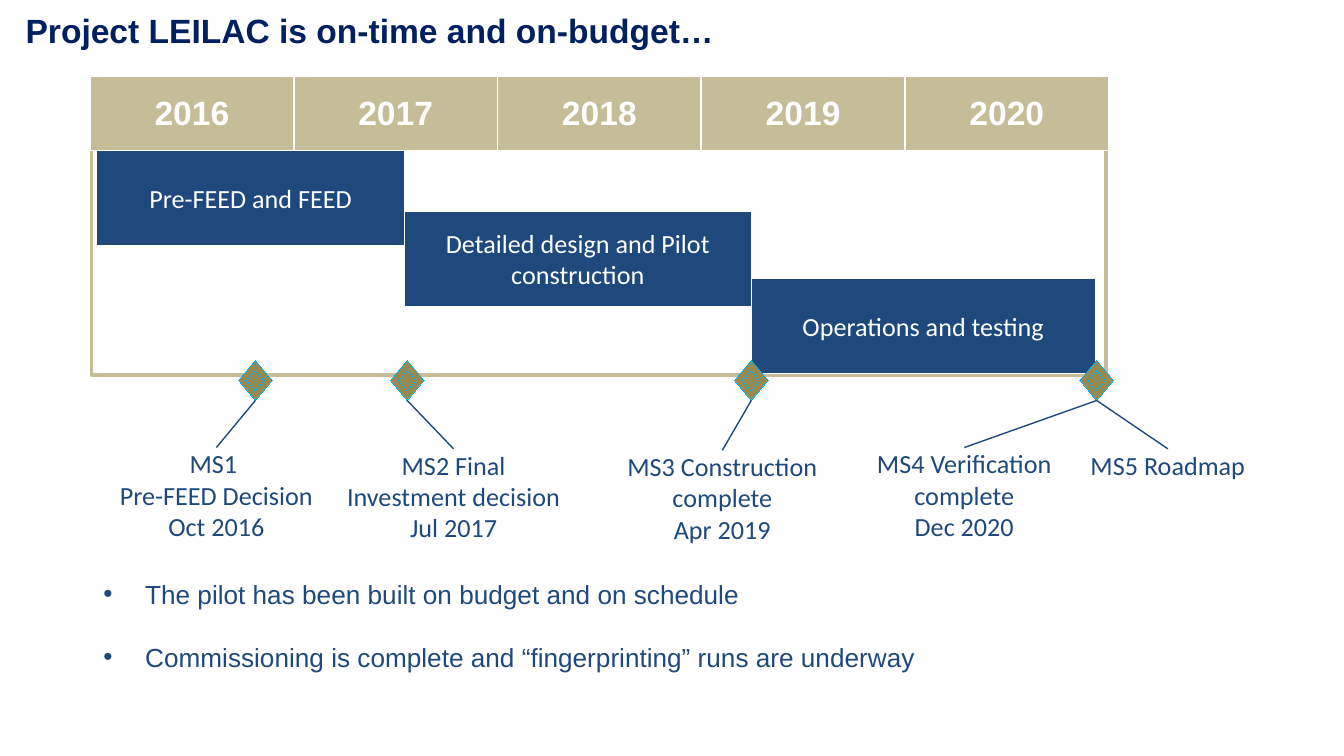
from lxml.etree import SubElement
from pptx import Presentation
from pptx.dml.color import RGBColor
from pptx.enum.shapes import MSO_CONNECTOR, MSO_SHAPE
from pptx.enum.text import MSO_ANCHOR as Anchor, MSO_AUTO_SIZE as AutoSize, PP_ALIGN as Align
from pptx.oxml.ns import qn
from pptx.util import Inches, Pt

NAVY, BLUE, WHITE = "002060", "1F497D", "FFFFFF"
SAND, OLIVE, CYAN = "C4BD97", "948A54", "00B0F0"
HAIRLINE = 0.01

YEARS = ["2016", "2017", "2018", "2019", "2020"]
PHASES = [  # left, top, width, name
    (0.72, 1.12, 2.29, "Pre-FEED and FEED"),
    (3.01, 1.57, 2.58, "Detailed design and Pilot construction"),
    (5.59, 2.07, 2.56, "Operations and testing"),
]
MARKER_CENTERS = [1.9, 3.03, 5.59, 8.16]
MILESTONES = [  # marker index, left, top, width, paragraphs of lines
    (0, 0.67, 3.33, 1.88, [["MS1 "], ["Pre-FEED Decision", "Oct 2016"]]),
    (1, 2.58, 3.34, 1.59, [["MS2 Final Investment decision", "Jul 2017"]]),
    (2, 4.55, 3.35, 1.65, [["MS3 Construction complete", "Apr 2019"]]),
    (3, 6.39, 3.33, 1.57, [["MS4 Verification complete", "Dec 2020"]]),
    (3, 8.06, 3.34, 1.26, [["MS5 Roadmap"]]),
]
BULLETS = [
    "The pilot has been built on budget and on schedule",
    "Commissioning is complete and “fingerprinting” runs are underway",
]


def color(hex_value):
    return RGBColor.from_string(hex_value)


def inches(*values):
    return [Inches(value) for value in values]


def place(shape, left, top, width, height):
    shape.left, shape.top, shape.width, shape.height = inches(left, top, width, height)


def next_para(frame, index):
    return frame.add_paragraph() if index else frame.paragraphs[0]


def add_run(para, text, font_name, size, hex_value, bold=False):
    span = para.add_run()
    span.text = text
    font = span.font
    font.name, font.size, font.bold = font_name, Pt(size), bold
    font.color.rgb = color(hex_value)


def set_frame(frame, margin=0, anchor=Anchor.TOP):
    frame.word_wrap = True
    frame.auto_size = AutoSize.NONE
    frame.vertical_anchor = anchor
    frame.margin_left = frame.margin_right = Inches(margin)
    frame.margin_top = frame.margin_bottom = Inches(margin / 2)


def add_box(slide, kind, bounds, fill, line, width=HAIRLINE):
    box = slide.shapes.add_shape(kind, *inches(*bounds))
    box.shadow.inherit = False
    if fill:
        box.fill.solid()
        box.fill.fore_color.rgb = color(fill)
    else:
        box.fill.background()
    box.line.color.rgb = color(line)
    box.line.width = Pt(width)
    return box


def add_phase(slide, left, top, width, name):
    bar = add_box(slide, MSO_SHAPE.RECTANGLE, (left, top, width, 0.71), BLUE, WHITE)
    set_frame(bar.text_frame, anchor=Anchor.MIDDLE)
    para = bar.text_frame.paragraphs[0]
    para.alignment = Align.CENTER
    add_run(para, name, "Calibri", 14, WHITE)


def add_marker(slide, center):
    """Draw two nested diamonds and return the outer one."""
    outer, _ = [
        add_box(slide, MSO_SHAPE.DIAMOND,
                (center - width / 2, 2.83 - height / 2, width, height), OLIVE, CYAN)
        for width, height in [(0.25, 0.3), (0.13, 0.15)]
    ]
    return outer


def add_milestone(slide, marker, left, top, width, paragraphs):
    label = slide.shapes.add_textbox(*inches(left, top, width, 0.75))
    set_frame(label.text_frame)
    for para_index, lines in enumerate(paragraphs):
        para = next_para(label.text_frame, para_index)
        para.alignment = Align.CENTER
        for line_index, text in enumerate(lines):
            if line_index:
                para.add_line_break()
            add_run(para, text, "Calibri", 14, BLUE)

    leader = slide.shapes.add_connector(MSO_CONNECTOR.STRAIGHT, 0, 0, 0, 0)
    leader.begin_connect(marker, 2)
    leader.end_connect(label, 0)
    leader.line.color.rgb = color(BLUE)
    leader.line.width = Pt(0.75)
    SubElement(leader._element.spPr, qn("a:effectLst"))


def add_cell_borders(cell):
    properties = cell._tc.get_or_add_tcPr()
    for index, side in enumerate("LRTB"):
        border = properties.makeelement(qn(f"a:ln{side}"), {"w": str(Pt(1))})
        properties.insert(index, border)
        fill = SubElement(border, qn("a:solidFill"))
        SubElement(fill, qn("a:srgbClr"), val=WHITE)


def add_year_table(slide):
    bounds = inches(0.67, 0.57, 7.58, 0.55)
    table = slide.shapes.add_table(1, len(YEARS), *bounds).table
    for cell, year in zip(table.rows[0].cells, YEARS):
        cell.fill.solid()
        cell.fill.fore_color.rgb = color(SAND)
        cell.vertical_anchor = Anchor.MIDDLE
        add_cell_borders(cell)
        para = cell.text_frame.paragraphs[0]
        para.alignment = Align.CENTER
        add_run(para, year, "Arial", 18, WHITE, bold=True)


def fill_title(title):
    place(title, 0.09, 0.02, 9.4, 0.4)
    set_frame(title.text_frame, margin=0.1)
    para = title.text_frame.paragraphs[0]
    para.alignment = Align.LEFT
    add_run(para, "Project LEILAC is on-time and on-budget…", "Arial", 18, NAVY, bold=True)


def fill_bullets(body):
    place(body, 0.67, 4.25, 8.89, 0.81)
    frame = body.text_frame
    set_frame(frame, margin=0.1)
    for index, text in enumerate(BULLETS):
        para = next_para(frame, index)
        properties = para._p.get_or_add_pPr()
        properties.set("marL", str(Inches(0.31)))
        properties.set("indent", str(Inches(-0.31)))
        SubElement(properties, qn("a:buFont"), typeface="Arial")
        SubElement(properties, qn("a:buChar"), char="•")
        para.alignment = Align.JUSTIFY
        para.space_before = Pt(17 if index else 0)
        add_run(para, text, "Arial", 14, BLUE)


def main():
    deck = Presentation()
    deck.slide_width = Inches(10)
    deck.slide_height = deck.slide_width * 9 // 16
    slide = deck.slides.add_slide(deck.slide_layouts[1])
    fill_title(slide.shapes.title)
    fill_bullets(slide.placeholders[1])

    add_box(slide, MSO_SHAPE.RECTANGLE, (0.68, 1.1, 7.55, 1.69), None, SAND, 2)
    for phase in PHASES:
        add_phase(slide, *phase)
    add_year_table(slide)
    markers = [add_marker(slide, center) for center in MARKER_CENTERS]
    for index, *label in MILESTONES:
        add_milestone(slide, markers[index], *label)
    deck.save("out.pptx")


if __name__ == "__main__":
    main()
